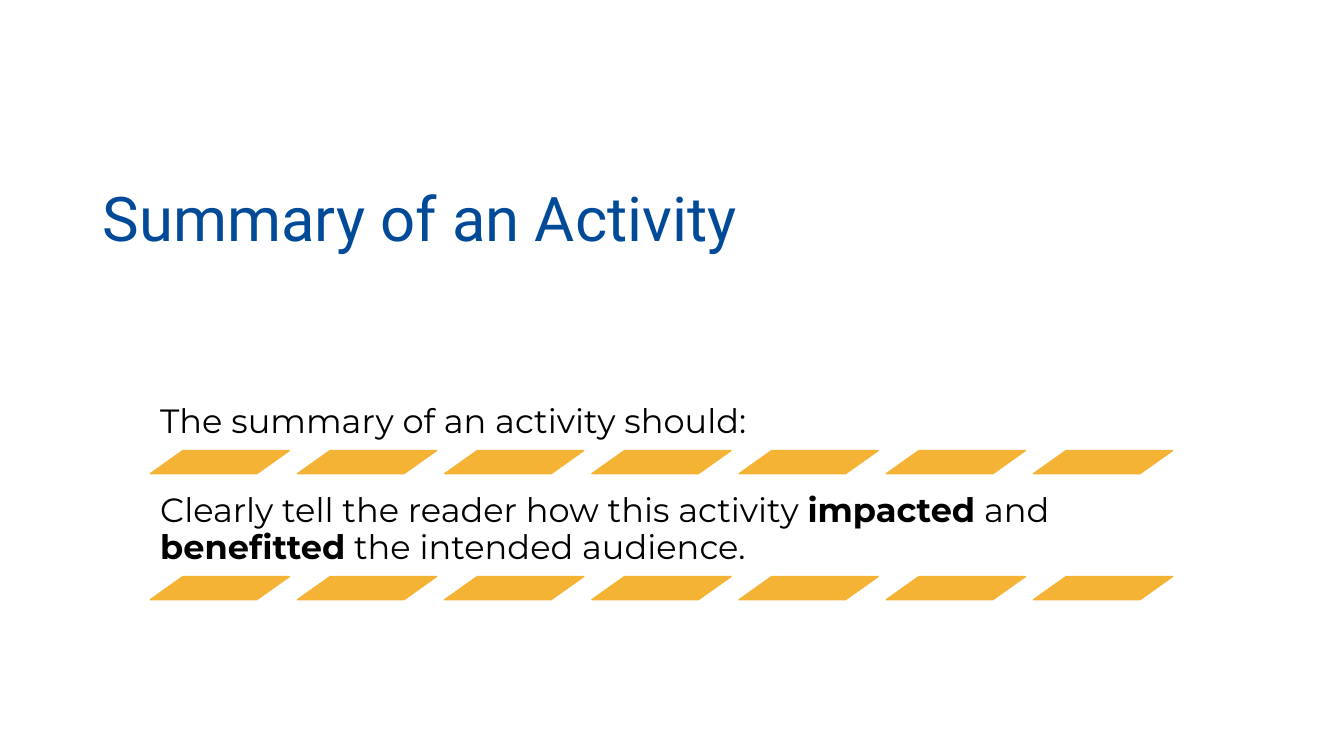
from pptx import Presentation
from pptx import util as u
from pptx.dml.color import RGBColor
from pptx.enum import shapes, text

PX = 9144
BLUE = RGBColor(0x00, 0x4A, 0x98)
BLACK = RGBColor(0x00, 0x00, 0x00)
GOLD = RGBColor(0xF5, 0xB3, 0x35)
DASHES, DASH_W, DASH_H, DASH_STEP = 7, 138, 23, 146
POINTS = [
    [("The summary of an activity should:", False)],
    [("Clearly tell the reader how this activity ", False), ("impacted", True),
     (" and ", False), ("benefitted", True), (" the intended audience.", False)],
]


def px(*lengths):
    """Turn px lengths into EMU."""
    return [u.Emu(n * PX) for n in lengths]


def add_text(parent, box, runs, font, size, color, anchor, inset_y):
    """Place one paragraph of (words, bold) runs in the box."""
    tf = parent.add_textbox(*px(*box)).text_frame
    side, edge = px(10, inset_y)
    frame = {"word_wrap": True, "vertical_anchor": anchor, "margin_left": side,
             "margin_right": side, "margin_top": edge, "margin_bottom": edge}
    for name, value in frame.items():
        setattr(tf, name, value)
    p = tf.paragraphs[0]
    p.line_spacing = 0.9
    for words, bold in runs:
        r = p.add_run()
        r.text = words
        for name, value in {"name": font, "size": u.Pt(size), "bold": bold}.items():
            setattr(r.font, name, value)
        r.font.color.rgb = color


def add_dashes(parent, x, y):
    """Draw a row of slanted dashes from the given corner."""
    for i in range(DASHES):
        s = parent.add_shape(shapes.MSO_SHAPE.PARALLELOGRAM,
                             *px(x + i * DASH_STEP, y, DASH_W, DASH_H))
        s.adjustments[0] = 1.41
        s.shadow.inherit = False
        s.fill.solid()
        s.fill.fore_color.rgb = GOLD
        s.line.color.rgb = GOLD
        s.line.width = u.Pt(1)


def add_point(parent, box, runs):
    """Place a statement with a row of dashes along its lower edge."""
    x, y, w, h = box
    add_text(parent, box, runs, "Montserrat", 24, BLACK, text.MSO_ANCHOR.BOTTOM, 10)
    add_dashes(parent, x, y + h)


def add_points(slide, x, y, w, h, step):
    """Stack the statements in one group."""
    group = slide.shapes.add_group_shape()
    for i, runs in enumerate(POINTS):
        add_point(group.shapes, (x, y + i * step, w, h), runs)


def main():
    """Build and save the slide."""
    prs = Presentation()
    prs.slide_width, prs.slide_height = u.Inches(13.33), u.Inches(7.5)
    slide = prs.slides.add_slide(prs.slide_layouts[6])
    add_text(slide.shapes, (92, 176, 1150, 87), [("Summary of an Activity", False)],
             "Roboto", 44, BLUE, text.MSO_ANCHOR.MIDDLE, 5)
    add_points(slide, 149, 353, 1035, 94, 125)
    prs.save("out.pptx")


if __name__ == "__main__":
    main()
